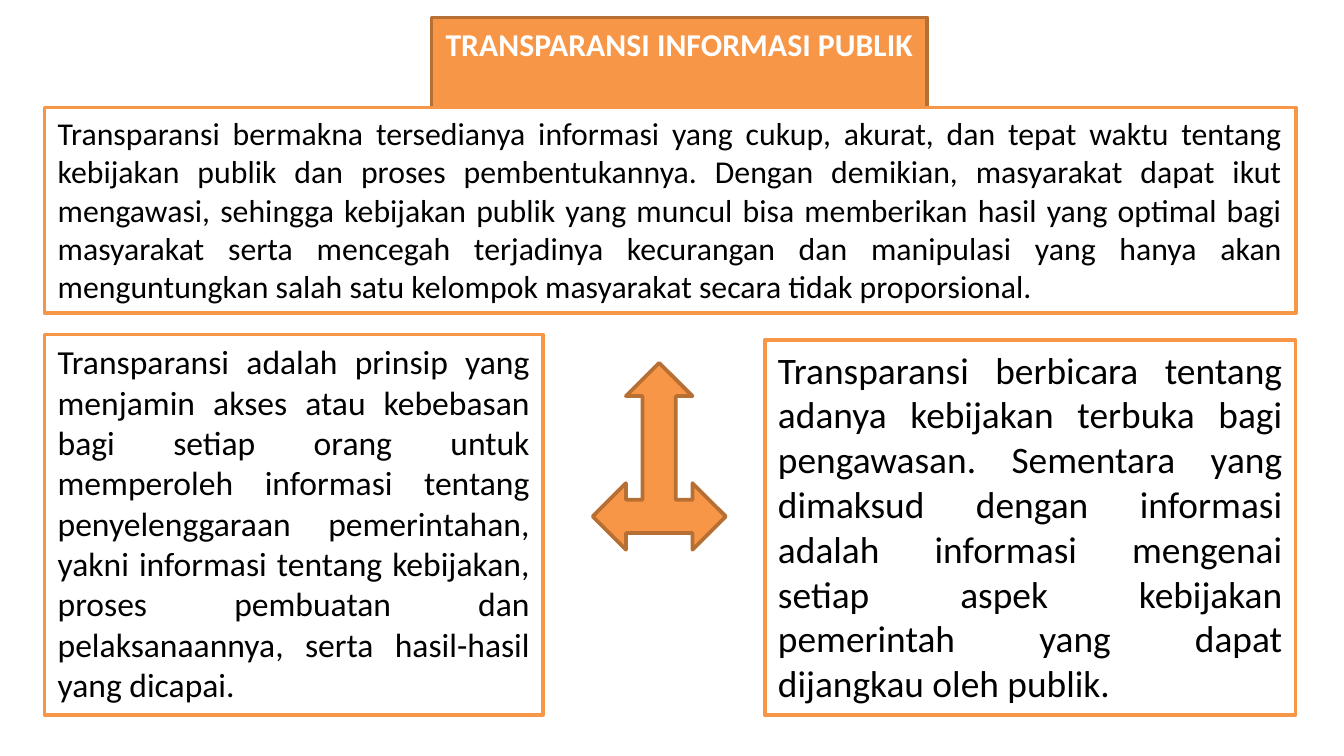
from dataclasses import dataclass

import pptx
import pptx.dml.color
import pptx.enum.shapes
import pptx.enum.text
import pptx.util

Pt = pptx.util.Pt
Align = pptx.enum.text.PP_ALIGN
Shape = pptx.enum.shapes.MSO_SHAPE

ORANGE, BROWN, WHITE, BLACK = "F79646", "B76F34", "FFFFFF", "000000"
LEFT, RIGHT, BOTTOM = 23.8, 694.1, 383


@dataclass(frozen=True)
class Panel:
    left: float
    top: float
    right: float
    bottom: float
    size: float
    text: str


PANELS = [
    Panel(LEFT, 57.6, RIGHT, 167.8, 17,
          "Transparansi bermakna tersedianya informasi yang cukup, akurat, dan tepat "
          "waktu tentang kebijakan publik dan proses pembentukannya. Dengan demikian, "
          "masyarakat dapat ikut mengawasi, sehingga kebijakan publik yang muncul bisa "
          "memberikan hasil yang optimal bagi masyarakat serta mencegah terjadinya "
          "kecurangan dan manipulasi yang hanya akan menguntungkan salah satu kelompok "
          "masyarakat secara tidak proporsional."),
    Panel(LEFT, 179.3, 290.9, BOTTOM, 18,
          "Transparansi adalah prinsip yang menjamin akses atau kebebasan bagi setiap "
          "orang untuk memperoleh informasi tentang penyelenggaraan pemerintahan, yakni "
          "informasi tentang kebijakan, proses pembuatan dan pelaksanaannya, serta "
          "hasil-hasil yang dicapai."),
    Panel(409.7, 182.2, RIGHT, BOTTOM, 20,
          "Transparansi berbicara tentang adanya kebijakan terbuka bagi pengawasan. "
          "Sementara yang dimaksud dengan informasi adalah informasi mengenai setiap "
          "aspek kebijakan pemerintah yang dapat dijangkau oleh publik."),
]


def color(value: str) -> pptx.dml.color.RGBColor:
    return pptx.dml.color.RGBColor.from_string(value)


def paint(shape, fill: str, line: str) -> None:
    shape.fill.solid()
    shape.fill.fore_color.rgb = color(fill)
    shape.line.color.rgb = color(line)
    shape.line.width = Pt(2)


def write(shape, text: str, *, size: float, ink: str, align: Align,
          bold: bool = False) -> None:
    frame = shape.text_frame
    frame.text = text
    frame.word_wrap = True
    frame.auto_size = pptx.enum.text.MSO_AUTO_SIZE.SHAPE_TO_FIT_TEXT
    frame.vertical_anchor = pptx.enum.text.MSO_ANCHOR.TOP
    paragraph = frame.paragraphs[0]
    paragraph.alignment = align
    font = paragraph.runs[0].font
    font.name, font.size, font.bold = "Calibri", Pt(size), bold
    font.color.rgb = color(ink)


def add_shape(slide, kind: Shape, left: float, top: float, width: float,
              height: float, *, fill: str, line: str):
    shape = slide.shapes.add_shape(kind, Pt(left), Pt(top), Pt(width), Pt(height))
    shape.shadow.inherit = False
    paint(shape, fill, line)
    return shape


def add_panel(slide, panel: Panel) -> None:
    shape = add_shape(slide, Shape.RECTANGLE, panel.left, panel.top,
                      panel.right - panel.left, panel.bottom - panel.top,
                      fill=WHITE, line=ORANGE)
    write(shape, panel.text, size=panel.size, ink=BLACK, align=Align.JUSTIFY)


def format_title(title) -> None:
    title.left, title.top = Pt(231.1), Pt(9.4)
    title.width, title.height = Pt(265.7), Pt(28)
    paint(title, ORANGE, BROWN)
    write(title, "TRANSPARANSI INFORMASI PUBLIK", size=17, ink=WHITE,
          align=Align.CENTER, bold=True)


def main() -> None:
    presentation = pptx.Presentation()
    presentation.slide_width, presentation.slide_height = Pt(720), Pt(405)
    slide = presentation.slides.add_slide(presentation.slide_layouts[5])
    format_title(slide.shapes.title)
    for panel in PANELS:
        add_panel(slide, panel)
    add_shape(slide, Shape.LEFT_RIGHT_UP_ARROW, 317.5, 194.4, 71.3, 100.1,
              fill=ORANGE, line=BROWN)
    presentation.save("out.pptx")


if __name__ == "__main__":
    main()
